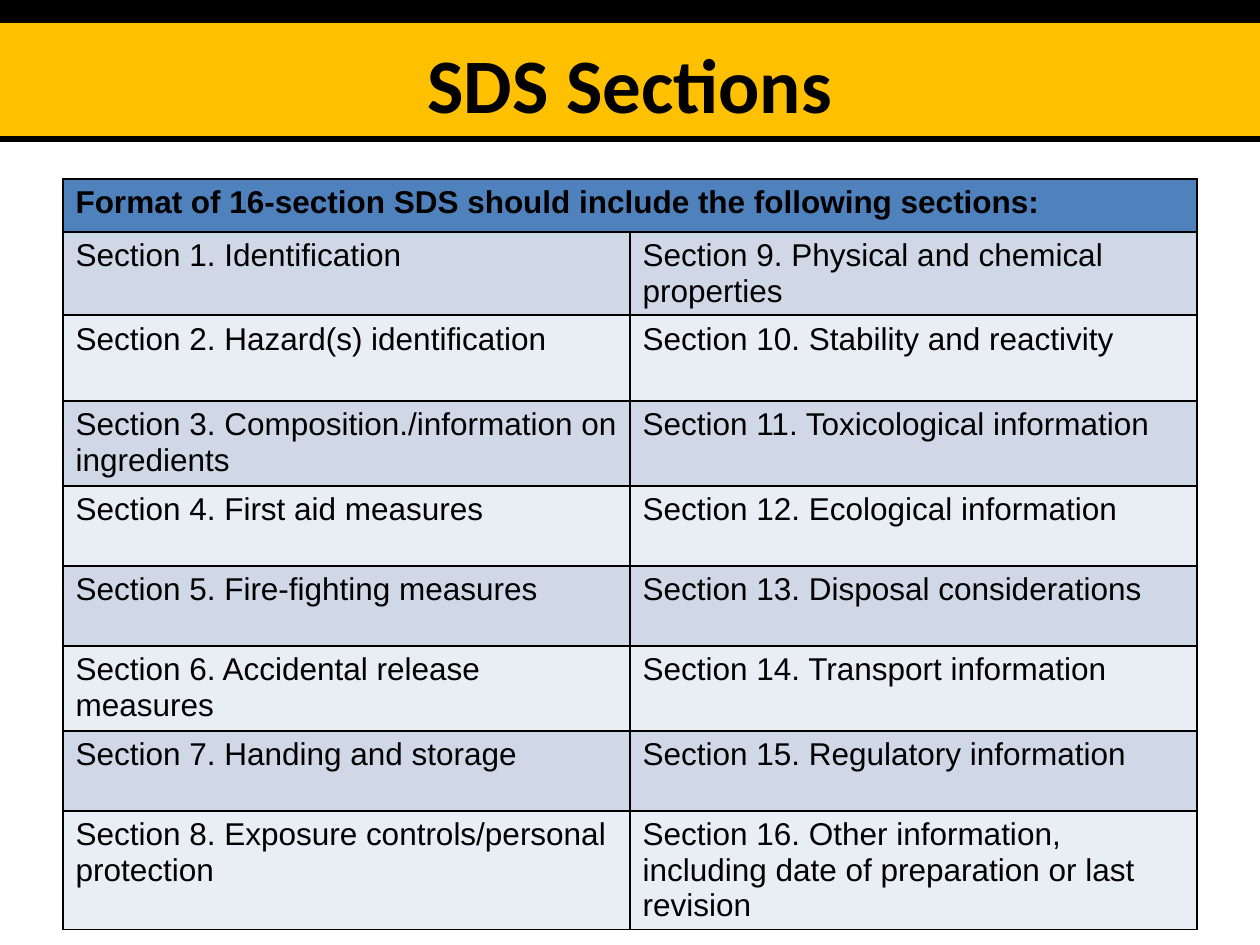
from lxml.etree import SubElement
from pptx import Presentation
from pptx.dml.color import RGBColor
from pptx.enum.shapes import MSO_CONNECTOR as Connector, MSO_SHAPE as Shape
from pptx.enum.text import MSO_ANCHOR as Anchor, PP_ALIGN as Align
from pptx.oxml import parse_xml
from pptx.oxml.ns import nsdecls, qn
from pptx.util import Emu, Pt

PX_PER_INCH = 126
SLIDE_WIDTH, SLIDE_HEIGHT = 1260, 945
BLACK = RGBColor(0x00, 0x00, 0x00)
AMBER = RGBColor(0xFF, 0xC0, 0x00)
HEADER_BLUE = RGBColor(0x4F, 0x81, 0xBD)
BAND_FILLS = (RGBColor(0xD0, 0xD8, 0xE8), RGBColor(0xE9, 0xED, 0xF4))

HEADING = "Format of 16-section SDS should include the following sections:"
SECTIONS = [
    "Identification",
    "Hazard(s) identification",
    "Composition./information on ingredients",
    "First aid measures",
    "Fire-fighting measures",
    "Accidental release measures",
    "Handing and storage",
    "Exposure controls/personal protection",
    "Physical and chemical properties",
    "Stability and reactivity",
    "Toxicological information",
    "Ecological information",
    "Disposal considerations",
    "Transport information",
    "Regulatory information",
    "Other information, including date of preparation or last revision",
]
ROW_HEIGHTS = (53, 80, 86, 85, 80, 80, 85, 80, 80)


def px(length):
    return Emu(round(length * 914400 / PX_PER_INCH))


def add_band(slide, height, color):
    band = slide.shapes.add_shape(Shape.RECTANGLE, 0, 0, px(SLIDE_WIDTH), px(height))
    band.shadow.inherit = False
    band.fill.solid()
    band.fill.fore_color.rgb = color
    band.line.color.rgb = color
    band.line.width = Pt(2)


def add_rule(slide, y):
    rule = slide.shapes.add_connector(
        Connector.STRAIGHT, px(SLIDE_WIDTH), px(y), 0, px(y))
    rule.line.color.rgb = BLACK
    rule.line.width = Pt(3.5)
    SubElement(rule._element.spPr, qn("a:effectLst"))


def add_run(paragraph, text, font_name, size, bold):
    run = paragraph.add_run()
    run.text = text
    run.font.name = font_name
    run.font.size = Pt(size)
    run.font.bold = bold
    run.font.color.rgb = BLACK


def place_title(slide, text):
    title = slide.shapes.title
    title.left, title.top, title.width, title.height = map(px, (63, 30, 1134, 157))
    title.text_frame.vertical_anchor = Anchor.TOP
    paragraph = title.text_frame.paragraphs[0]
    paragraph.alignment = Align.CENTER
    add_run(paragraph, text, "Calibri", 44, True)
    slide.shapes._spTree.append(title._element)


def set_borders(cell):
    properties = cell._tc.get_or_add_tcPr()
    for position, side in enumerate(("lnL", "lnR", "lnT", "lnB")):
        properties.insert(position, parse_xml(
            f'<a:{side} {nsdecls("a")} w="{Pt(1)}"><a:solidFill>'
            f'<a:srgbClr val="{BLACK}"/></a:solidFill></a:{side}>'))


def format_cell(cell, fill):
    cell.fill.solid()
    cell.fill.fore_color.rgb = fill
    set_borders(cell)


def add_sections_table(slide):
    table = slide.shapes.add_table(
        len(ROW_HEIGHTS), 2, px(63), px(179), px(1134), px(sum(ROW_HEIGHTS))).table
    for row, height in zip(table.rows, ROW_HEIGHTS):
        row.height = px(height)
    for cell in table.rows[0].cells:
        format_cell(cell, HEADER_BLUE)
    header = table.cell(0, 0)
    header.merge(table.cell(0, 1))
    add_run(header.text_frame.paragraphs[0], HEADING, "Arial", 18, True)
    per_column = len(ROW_HEIGHTS) - 1
    for index, section in enumerate(SECTIONS):
        column, row = divmod(index, per_column)
        cell = table.cell(row + 1, column)
        format_cell(cell, BAND_FILLS[row % 2])
        add_run(cell.text_frame.paragraphs[0],
                f"Section {index + 1}. {section}", "Arial", 18, False)


def main():
    deck = Presentation()
    deck.slide_width, deck.slide_height = px(SLIDE_WIDTH), px(SLIDE_HEIGHT)
    slide = deck.slides.add_slide(deck.slide_layouts[5])
    add_band(slide, 136, AMBER)
    add_band(slide, 21, BLACK)
    add_rule(slide, 139)
    place_title(slide, "SDS Sections")
    add_sections_table(slide)
    deck.save("out.pptx")


if __name__ == "__main__":
    main()
